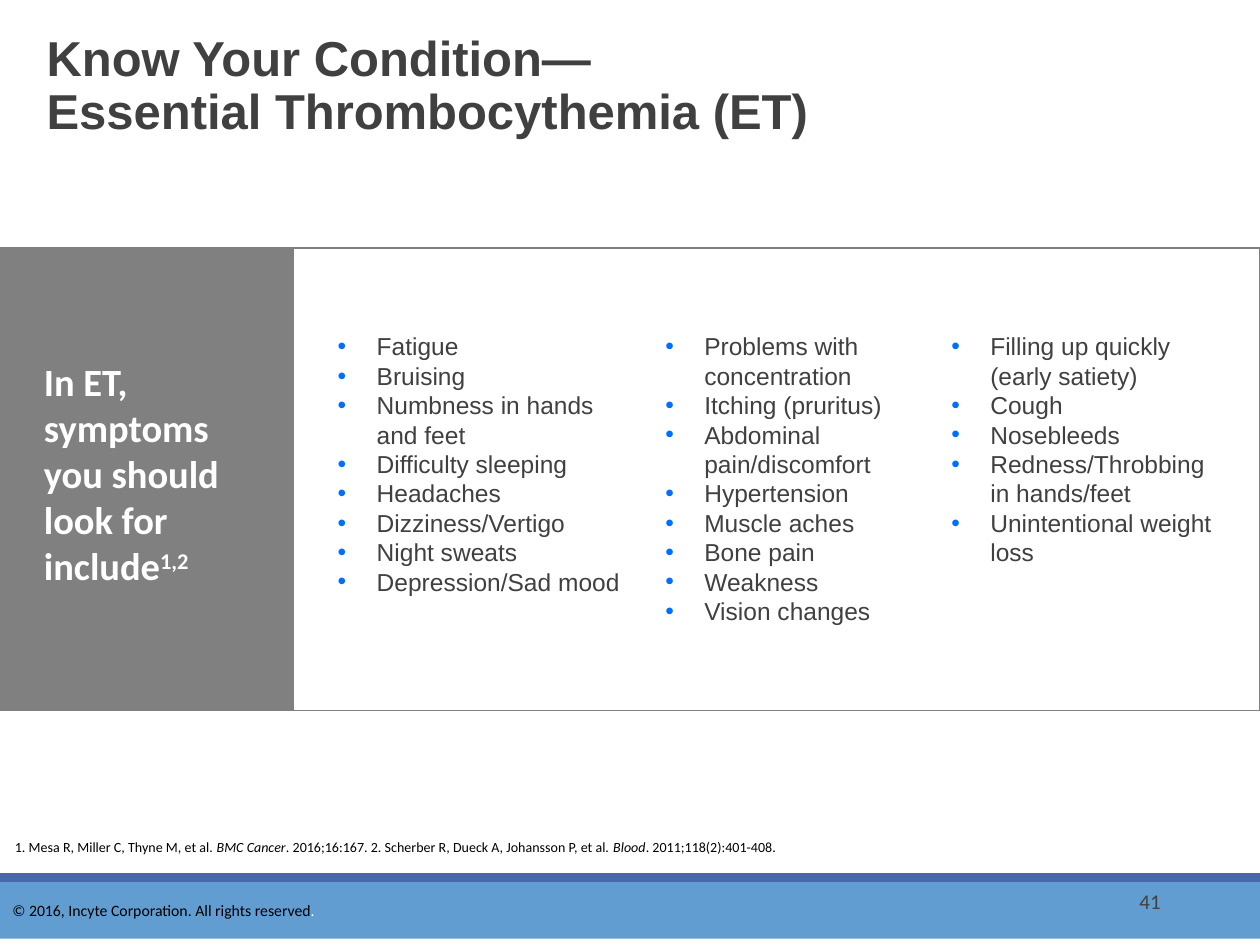
from copy import deepcopy
from dataclasses import dataclass
from typing import Optional

from lxml.etree import SubElement
from pptx import Presentation
from pptx.dml.color import RGBColor as RGB
from pptx.enum.shapes import MSO_SHAPE as Shape
from pptx.enum.text import MSO_ANCHOR as Anchor, MSO_AUTO_SIZE as AutoSize, PP_ALIGN as Align
from pptx.oxml.ns import qn
from pptx.util import Inches, Pt


@dataclass(frozen=True)
class Style:
    font: str
    size: float
    color: str
    bold: bool = False


@dataclass(frozen=True)
class Theme:
    title: Style = Style("Arial", 28, "404040", True)
    item: Style = Style("Arial", 14, "404040")
    label: Style = Style("Calibri", 22, "FFFFFF", True)
    reference: Style = Style("Calibri", 8, "000000")
    copyright: Style = Style("Calibri", 9, "000000")
    copyright_end: Style = Style("Calibri", 9, "FFFFFF")
    number: Style = Style("Calibri", 12, "404040")
    bullet: str = "006EFF"
    panel: str = "808080"
    band: str = "629DD1"
    stripe: str = "4A66AC"


@dataclass(frozen=True)
class Box:
    left: float
    top: float
    width: float
    height: float

    def lengths(self):
        return [Inches(v) for v in (self.left, self.top, self.width, self.height)]


@dataclass(frozen=True)
class Block:
    box: Box
    fill: Optional[str] = None
    line: Optional[str] = None


@dataclass(frozen=True)
class SymptomList:
    box: Box
    items: tuple


THEME = Theme()
BAND = Block(Box(0, 6.95, 10, 0.5), THEME.band)
STRIPE = Block(Box(0, 6.93, 10, 0.07), THEME.stripe)
FRAME = Block(Box(2.33, 1.97, 7.67, 3.67), line=THEME.panel)
LABEL_PANEL = Block(Box(0, 1.97, 2.33, 3.67), THEME.panel, THEME.panel)

SYMPTOMS = (
    SymptomList(Box(2.58, 2.58, 2.58, 2.69), (
        "Fatigue", "Bruising", "Numbness in hands and feet", "Difficulty sleeping",
        "Headaches", "Dizziness/Vertigo", "Night sweats", "Depression/Sad mood")),
    SymptomList(Box(5.18, 2.58, 2.67, 3.16), (
        "Problems with concentration", "Itching (pruritus)", "Abdominal pain/discomfort",
        "Hypertension", "Muscle aches", "Bone pain", "Weakness", "Vision changes")),
    SymptomList(Box(7.45, 2.58, 2.3, 1.99), (
        "Filling up quickly (early satiety)", "Cough", "Nosebleeds",
        "Redness/Throbbing in hands/feet", "Unintentional weight loss")),
)

REFERENCES = (
    ("1. Mesa R, Miller C, Thyne M, et al. ", False),
    ("BMC Cancer", True),
    (". 2016;16:167. 2. Scherber R, Dueck A, Johansson P, et al. ", False),
    ("Blood", True),
    (". 2011;118(2):401-408.", False),
)


def apply(target, values: dict):
    for name, value in values.items():
        setattr(target, name, value)


def add_run(p, text: str, style: Style, italic: bool = False):
    r = p.add_run()
    r.text = text
    apply(r.font, {"name": style.font, "size": Pt(style.size),
                   "bold": style.bold, "italic": italic})
    r.font.color.rgb = RGB.from_string(style.color)
    return r


def add_block(slide, block: Block):
    s = slide.shapes.add_shape(Shape.RECTANGLE, *block.box.lengths())
    s.shadow.inherit = False
    if block.fill:
        s.fill.solid()
        s.fill.fore_color.rgb = RGB.from_string(block.fill)
    else:
        s.fill.background()
    if block.line:
        s.line.color.rgb = RGB.from_string(block.line)
        s.line.width = Pt(1)
    else:
        s.line.fill.background()
    return s


def add_text(slide, box: Box, anchor=Anchor.TOP):
    tf = slide.shapes.add_textbox(*box.lengths()).text_frame
    apply(tf, {"word_wrap": True, "vertical_anchor": anchor})
    return tf.paragraphs[0]


def place(s, box: Box, anchor):
    apply(s, dict(zip(("left", "top", "width", "height"), box.lengths())))
    apply(s.text_frame, {"word_wrap": True, "vertical_anchor": anchor,
                         "auto_size": AutoSize.NONE})
    return s.text_frame


def add_bullet(p):
    pPr = p._p.get_or_add_pPr()
    apply_indent = {"marL": Inches(0.31), "indent": Inches(-0.31)}
    for name, value in apply_indent.items():
        pPr.set(name, str(value))
    color = SubElement(pPr, qn("a:buClr"))
    SubElement(color, qn("a:srgbClr"), val=THEME.bullet)
    SubElement(pPr, qn("a:buFont"), typeface="Arial")
    SubElement(pPr, qn("a:buChar"), char="•")


def fill_title(s):
    tf = place(s, Box(0.27, 0.19, 8.55, 1.01), Anchor.MIDDLE)
    p = tf.paragraphs[0]
    apply(p, {"alignment": Align.LEFT, "line_spacing": 0.9})
    r = add_run(p, "Know Your Condition—", THEME.title)
    p.add_line_break()
    p._p[-1].append(deepcopy(r._r.rPr))
    add_run(p, "Essential Thrombocythemia (ET)", THEME.title)


def fill_list(s, symptoms: SymptomList):
    tf = place(s, symptoms.box, Anchor.TOP)
    for i, item in enumerate(symptoms.items):
        p = tf.add_paragraph() if i else tf.paragraphs[0]
        add_bullet(p)
        apply(p, {"space_before": Pt(0), "alignment": Align.LEFT})
        add_run(p, item, THEME.item)


def add_footer(slide):
    tf = add_block(slide, BAND).text_frame
    apply(tf, {"vertical_anchor": Anchor.TOP, "margin_top": Inches(0.2), "word_wrap": True})
    p = tf.paragraphs[0]
    p.alignment = Align.LEFT
    add_run(p, "© 2016, Incyte Corporation. All rights reserved", THEME.copyright)
    add_run(p, ".", THEME.copyright_end)
    add_block(slide, STRIPE)


def main():
    prs = Presentation()
    apply(prs, {"slide_width": Inches(10), "slide_height": Inches(7.5)})
    slide = prs.slides.add_slide(prs.slide_layouts.get_by_name("Comparison"))
    fill_title(slide.shapes.title)
    *bodies, spare = list(slide.placeholders)[1:]
    spare.element.getparent().remove(spare.element)
    for s, symptoms in zip(bodies, SYMPTOMS):
        fill_list(s, symptoms)

    add_footer(slide)
    add_block(slide, FRAME)
    add_block(slide, LABEL_PANEL)
    p = add_text(slide, Box(0.25, 2.79, 1.65, 1.95))
    add_run(p, "In ET, symptoms you should look for include", THEME.label)
    r = add_run(p, "1,2", THEME.label)
    r.font._element.set("baseline", "30000")

    p = add_text(slide, Box(7.06, 6.95, 2.25, 0.4), Anchor.MIDDLE)
    p.alignment = Align.RIGHT
    add_run(p, "41", THEME.number)
    p = add_text(slide, Box(0.02, 6.61, 9.06, 0.54))
    for text, italic in REFERENCES:
        add_run(p, text, THEME.reference, italic)
    prs.save("out.pptx")


if __name__ == "__main__":
    main()
